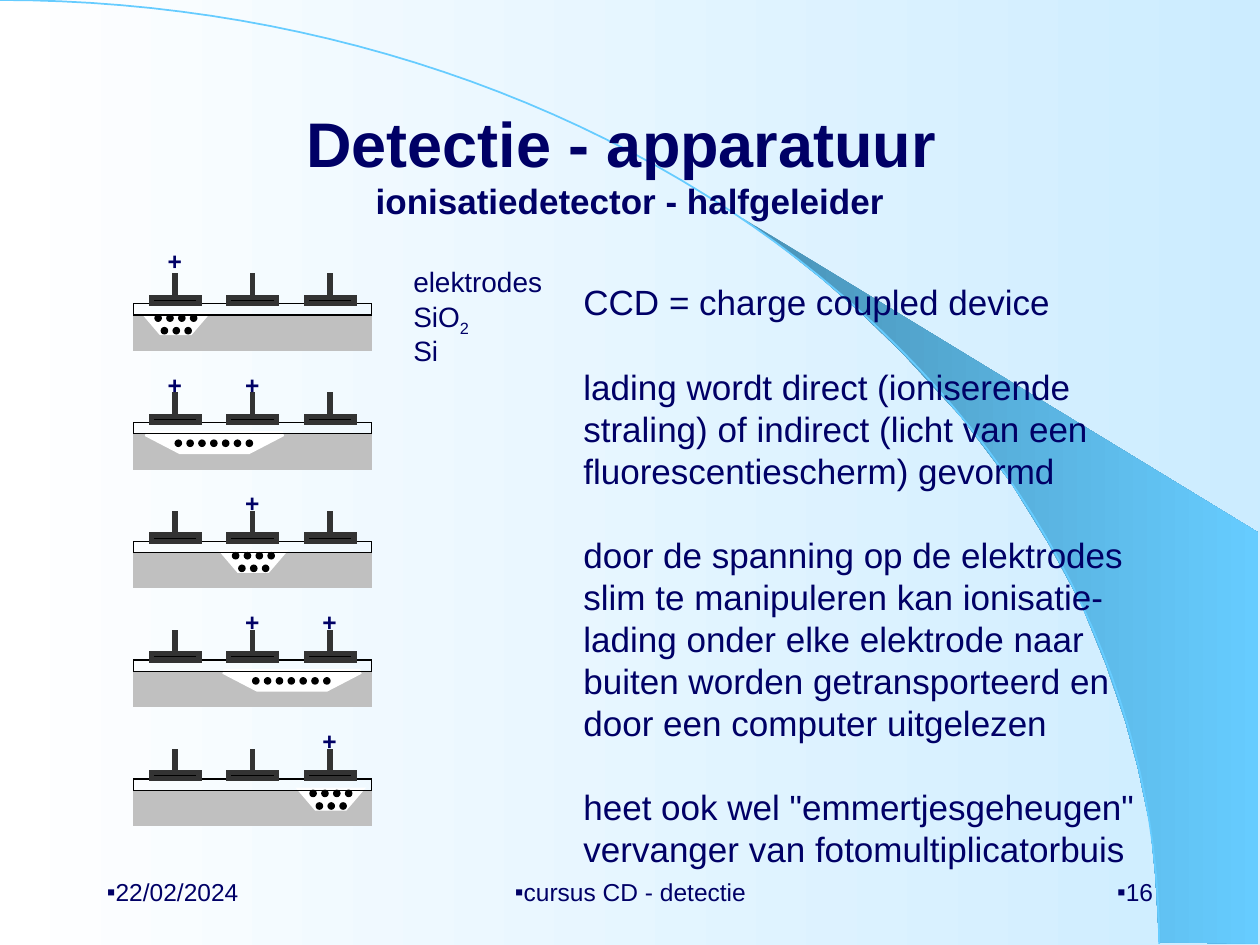
from math import cos, pi, sin

from lxml import etree
from pptx import Presentation
from pptx.dml.color import RGBColor
from pptx.enum.shapes import MSO_CONNECTOR, MSO_SHAPE
from pptx.enum.text import MSO_ANCHOR, MSO_AUTO_SIZE, PP_ALIGN
from pptx.oxml.ns import qn
from pptx.util import Inches, Pt

LEFT, CENTER, RIGHT = PP_ALIGN.LEFT, PP_ALIGN.CENTER, PP_ALIGN.RIGHT
TOP, MIDDLE = MSO_ANCHOR.TOP, MSO_ANCHOR.MIDDLE
RECT, OVAL = MSO_SHAPE.RECTANGLE, MSO_SHAPE.OVAL

FONT = "Arial"
COLORS = {
    "text": "000066", "white": "FFFFFF", "pale": "CCECFF", "sky": "66CCFF",
    "steel": "4992B6", "silicon": "C0C0C0", "black": "000000", "metal": "333333",
}

WEDGE = [
    (9.2, 7.48), (9.99, 7.49), (9.99, 4.23), (5.89, 1.73), (6.24, 1.99),
    (6.53, 2.22), (6.85, 2.5), (7.16, 2.8), (7.62, 3.3), (8.03, 3.84),
    (8.32, 4.31), (8.58, 4.79), (8.78, 5.28), (8.93, 5.72), (9.03, 6.09),
    (9.13, 6.56), (9.17, 6.96),
]
ARC_WIDTH, ARC_HEIGHT, ARC_STEPS = 9.2, 7.49, 60

# Positive electrodes in each stage, and the height of the plus above the silicon
STAGES = [((0,), 0.56), ((0, 1), 0.52), ((1,), 0.52), ((1, 2), 0.52), ((2,), 0.52)]
STAGE_TOP, STAGE_PITCH = 2.5, 0.943
CHIP_LEFT, CHIP_WIDTH = 1.06, 1.89
ELECTRODE_LEFT, ELECTRODE_PITCH, ELECTRODE_WIDTH = 1.2, 0.615, 0.38
DOT, DOT_PITCH = 0.05, 0.094

BODY = [
    ("CCD = charge coupled device", 0),
    ("lading wordt direct (ioniserende straling) of indirect (licht van een "
     "fluorescentiescherm) gevormd", 24),
    ("door de spanning op de elektrodes slim te manipuleren kan ionisatie-lading "
     "onder elke elektrode naar buiten worden getransporteerd en door een computer "
     "uitgelezen", 24),
    ('heet ook wel "emmertjesgeheugen"', 24),
    ("vervanger van fotomultiplicatorbuis", 0),
]


def rgb(name):
    return RGBColor.from_string(COLORS[name])


def set_gradient(fill, start, end):
    fill.gradient()
    fill.gradient_angle = 0
    for stop, name, position in zip(fill.gradient_stops, (start, end), (0, 1)):
        stop.color.rgb = rgb(name)
        stop.position = position


def style(sp, fill=None, line=None, width=0.75):
    sp.shadow.inherit = False
    if fill:
        sp.fill.solid()
        sp.fill.fore_color.rgb = rgb(fill)
    else:
        sp.fill.background()
    if line:
        sp.line.color.rgb = rgb(line)
        sp.line.width = Pt(width)
        etree.SubElement(sp._element.spPr.find(qn("a:ln")), qn("a:miter"), lim="800000")
    else:
        sp.line.fill.background()


def add_preset(s, kind, x, y, w, h, **look):
    sp = s.shapes.add_shape(kind, Inches(x), Inches(y), Inches(w), Inches(h))
    style(sp, **look)


def add_outline(s, points, close=True, **look):
    points = [(Inches(x), Inches(y)) for x, y in points]
    builder = s.shapes.build_freeform(*points[0])
    builder.add_line_segments(points[1:], close=close)
    sp = builder.convert_to_shape()
    style(sp, **look)
    return sp


def add_line(s, x1, y1, x2, y2, color, width):
    line = s.shapes.add_connector(
        MSO_CONNECTOR.STRAIGHT, Inches(x1), Inches(y1), Inches(x2), Inches(y2))
    line.line.color.rgb = rgb(color)
    line.line.width = Pt(width)
    etree.SubElement(line._element.spPr, qn("a:effectLst"))


def add_run(p, text, size, bold=False, baseline=None):
    r = p.add_run()
    r.text = text
    r.font.name, r.font.size, r.font.bold = FONT, Pt(size), bold
    r.font.color.rgb = rgb("text")
    if baseline:
        r._r.get_or_add_rPr().set("baseline", str(baseline))


def set_bullet(p, char=None):
    """Give a paragraph a flush bullet, or none."""
    pPr = p._p.get_or_add_pPr()
    pPr.set("marL", "0")
    pPr.set("indent", "0")
    if char:
        etree.SubElement(pPr, qn("a:buFont"), typeface=FONT)
        etree.SubElement(pPr, qn("a:buChar"), char=char)
    else:
        etree.SubElement(pPr, qn("a:buNone"))


def place(s, sp, x, y, w, h, anchor):
    """Move a placeholder, bring it to the front and return its text frame."""
    s.shapes._spTree.append(sp._element)
    sp.left, sp.top, sp.width, sp.height = (Inches(v) for v in (x, y, w, h))
    tf = sp.text_frame
    tf.word_wrap, tf.auto_size = True, MSO_AUTO_SIZE.NONE
    tf.vertical_anchor = anchor
    return tf


def add_text(s, text, x, y, w, h, size=14, bold=False, align=LEFT, anchor=TOP,
             inset=0.01, bullet=None, subscript=None):
    tb = s.shapes.add_textbox(Inches(x), Inches(y), Inches(w), Inches(h))
    tf = tb.text_frame
    tf.word_wrap, tf.vertical_anchor = True, anchor
    tf.margin_left = tf.margin_right = Inches(inset)
    tf.margin_top = tf.margin_bottom = Inches(min(inset, 0.05))
    p = tf.paragraphs[0]
    p.alignment = align
    if bullet:
        set_bullet(p, bullet)
    add_run(p, text, size, bold)
    if subscript:
        add_run(p, subscript, size, bold, baseline=-25000)


def add_backdrop(s):
    set_gradient(s.background.fill, "white", "pale")
    set_gradient(add_outline(s, WEDGE).fill, "steel", "sky")
    angles = [pi / 2 * i / ARC_STEPS for i in range(ARC_STEPS + 1)]
    arc = [(ARC_WIDTH * sin(a), ARC_HEIGHT * (1 - cos(a))) for a in angles]
    add_outline(s, arc, close=False, line="sky", width=1)


def add_title(s):
    p = place(s, s.shapes.title, 0.75, 0.67, 8.5, 1.25, MIDDLE).paragraphs[0]
    p.alignment = CENTER
    add_run(p, "Detectie - apparatuur ", 36, bold=True)
    p.add_line_break()
    add_run(p, "ionisatiedetector - halfgeleider", 20, bold=True)


def add_body(s):
    tf = place(s, s.placeholders[1], 4.53, 2.18, 4.65, 4.72, TOP)
    for i, (text, gap) in enumerate(BODY):
        p = tf.add_paragraph() if i else tf.paragraphs[0]
        p.line_spacing, p.space_before = Pt(24), Pt(gap)
        set_bullet(p)
        add_run(p, text, 20)


def add_charge_well(s, top, first, count):
    left = CHIP_LEFT + 0.1 + first * ELECTRODE_PITCH
    width = 0.47 + (count - 1) * ELECTRODE_PITCH
    slope = 0.12 if count == 1 else 0.27
    add_outline(s, [(left, top), (left + slope, top + 0.14),
                    (left + width - slope, top + 0.14), (left + width, top)],
                fill="white", line="white", width=3)
    # Each row of charges: number, offset from the left, offset from the top
    rows = [(4, 0.07, 0), (3, 0.12, 0.1)] if count == 1 else [(7, 0.23, 0.05)]
    for number, dx, dy in rows:
        for i in range(number):
            add_preset(s, OVAL, left + dx + i * DOT_PITCH, top + dy, DOT, DOT,
                       fill="black", line="black")


def add_stage(s, top, positive, plus_rise):
    add_preset(s, RECT, CHIP_LEFT, top, CHIP_WIDTH, 0.28, fill="silicon", line="silicon")
    add_charge_well(s, top, positive[0], len(positive))
    add_preset(s, RECT, CHIP_LEFT, top - 0.09, CHIP_WIDTH, 0.09, line="black")
    for i in range(3):
        x = ELECTRODE_LEFT + i * ELECTRODE_PITCH
        mid = x + ELECTRODE_WIDTH / 2
        add_preset(s, RECT, x, top - 0.14, ELECTRODE_WIDTH, 0.05,
                   fill="black", line="metal", width=3)
        add_line(s, mid, top - 0.14, mid, top - 0.33, "metal", 3)
        if i in positive:
            add_text(s, "+", mid - 0.07, top - plus_rise, 0.14, 0.19, bold=True)


def main():
    prs = Presentation()
    prs.slide_width, prs.slide_height = Inches(10), Inches(7.5)
    s = prs.slides.add_slide(prs.slide_layouts[1])
    add_backdrop(s)
    add_title(s)
    for i, (positive, plus_rise) in enumerate(STAGES):
        add_stage(s, STAGE_TOP + i * STAGE_PITCH, positive, plus_rise)
    for i, (label, sub) in enumerate([("elektrodes", None), ("SiO", "2"), ("Si", None)]):
        add_text(s, label, 3.27, 2.09 + i * 0.275, 1.09, 0.27, size=16, subscript=sub)
    add_body(s)
    for text, x, w, align in [("22/02/2024", 0.75, 2.08, LEFT),
                              ("cursus CD - detectie", 3.42, 3.17, CENTER),
                              ("16", 7.17, 2.08, RIGHT)]:
        add_text(s, text, x, 6.83, w, 0.5, align=align, anchor=MIDDLE,
                 inset=0.1, bullet="▪")
    prs.save("out.pptx")


if __name__ == "__main__":
    main()
